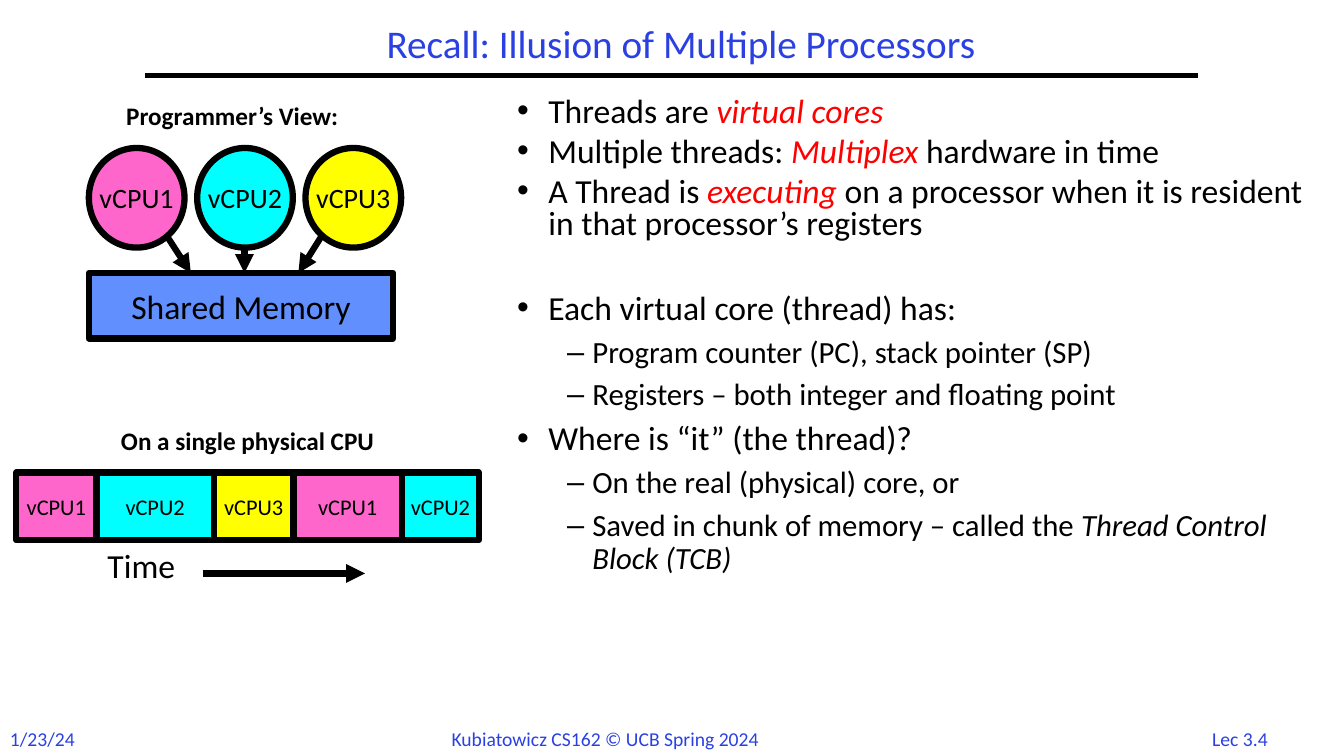
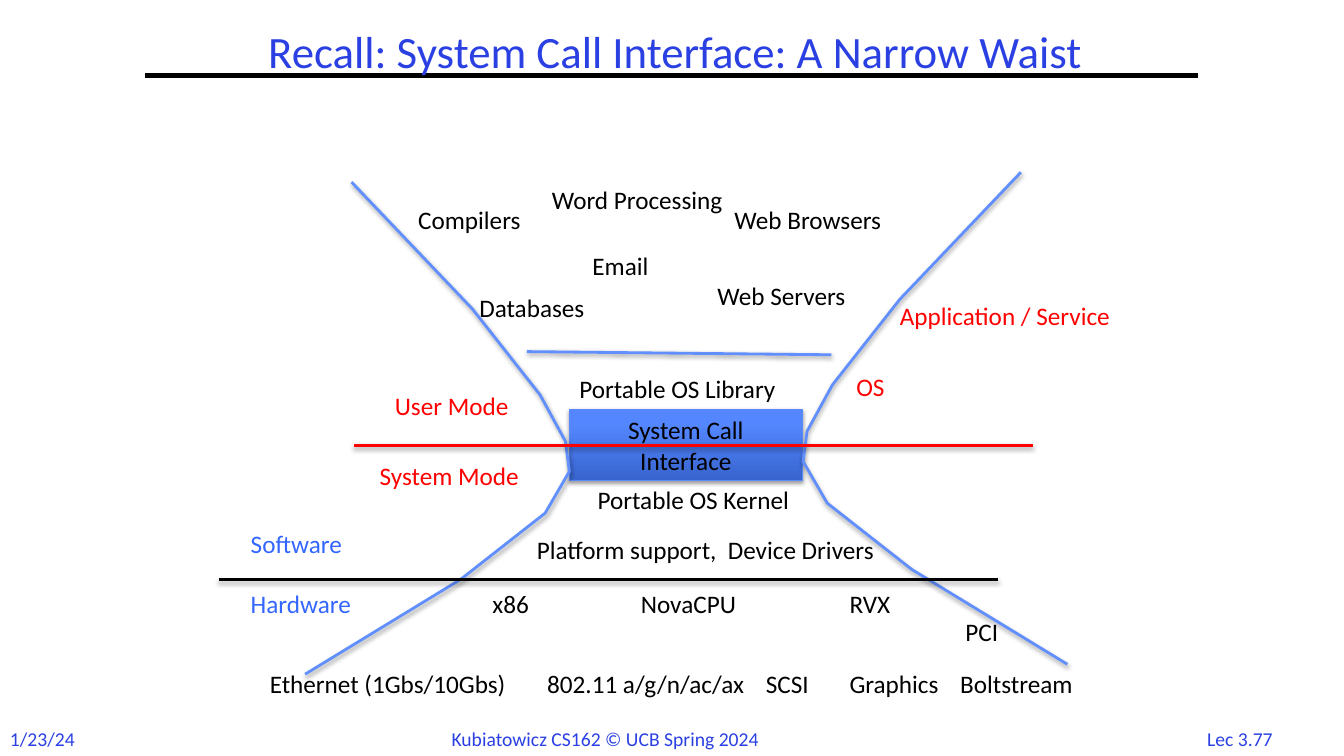
from itertools import accumulate
from pptx import Presentation
from pptx.dml.color import RGBColor
from pptx.enum.shapes import MSO_CONNECTOR, MSO_SHAPE
from pptx.enum.text import MSO_ANCHOR, PP_ALIGN
from pptx.oxml import parse_xml
from pptx.oxml.ns import nsdecls, qn
from pptx.util import Cm, Pt

FONT = "Calibri"
BLACK, RED, BLUE = "000000", "FF0000", "2A40E2"
SKY, LINK = "618FFD", "3366FF"
PINK, CYAN, YELLOW = "FF66CC", "00FFFF", "FFFF00"
HUES = {"vCPU1": PINK, "vCPU2": CYAN, "vCPU3": YELLOW}
LEFT, MID = PP_ALIGN.LEFT, PP_ALIGN.CENTER


def paint(target, tone):
    target.rgb = RGBColor.from_string(tone)


def style(para, size, tone=BLACK, align=LEFT, bold=False):
    para.alignment = align
    font = para.font
    font.name, font.size, font.bold = FONT, Pt(size), bold
    paint(font.color, tone)


def label(slide, text, box, size=18, tone=BLACK, align=LEFT, bold=False):
    frame = slide.shapes.add_textbox(*map(Cm, box)).text_frame
    frame.word_wrap = True
    frame.text = text
    style(frame.paragraphs[0], size, tone, align, bold)
    return frame


def block(slide, kind, text, box, size, tone=None):
    shape = slide.shapes.add_shape(kind, *map(Cm, box))
    shape.shadow.inherit = False
    if tone:
        shape.fill.solid()
        paint(shape.fill.fore_color, tone)
        paint(shape.line.color, BLACK)
        shape.line.width = Pt(4.5)
    frame = shape.text_frame
    frame.margin_left = frame.margin_right = 0
    frame.margin_top = frame.margin_bottom = 0
    frame.vertical_anchor = MSO_ANCHOR.MIDDLE
    frame.word_wrap = False
    frame.text = text
    for para in frame.paragraphs:
        style(para, size, align=MID)
    return shape


def effect(part, soft):
    props = part.element.spPr
    for old in props.findall(qn("a:effectLst")):
        props.remove(old)
    shade = (
        '<a:outerShdw blurRad="40000" dist="20000" dir="5400000" rotWithShape="0">'
        '<a:srgbClr val="000000"><a:alpha val="38000"/></a:srgbClr></a:outerShdw>'
    )
    props.append(parse_xml(
        f'<a:effectLst {nsdecls("a")}>{shade if soft else ""}</a:effectLst>'))


def stroke(slide, ends, tone=BLACK, width=2.0, arrow=False, soft=False):
    line = slide.shapes.add_connector(MSO_CONNECTOR.STRAIGHT, *map(Cm, ends))
    paint(line.line.color, tone)
    line.line.width = Pt(width)
    if arrow:
        line.element.spPr.find(qn("a:ln")).append(
            parse_xml(f'<a:tailEnd {nsdecls("a")} type="triangle"/>'))
    effect(line, soft)


def base(deck, title, box, size, page):
    slide = deck.slides.add_slide(deck.slide_layouts[6])
    stroke(slide, (3.66, 1.9, 30.2, 1.9), width=3)
    for text, left, width, align in (
        ("1/23/24", 0, 2.4, LEFT),
        ("Kubiatowicz CS162 © UCB Spring 2024", 11.13, 9.35, LEFT),
        (page, 30.02, 2.46, MID),
    ):
        label(slide, text, (left, 18.19, width, 0.85), 14, BLUE, align)
    frame = label(slide, title, box, size, BLUE, MID)
    frame.vertical_anchor = MSO_ANCHOR.MIDDLE
    frame.paragraphs[0].line_spacing = 0.9
    return slide


def bullet(para, level):
    props = para._p.get_or_add_pPr()
    left, hang = ((0.79, 0.79), (1.9, 0.64))[level]
    props.set("marL", str(Cm(left)))
    props.set("indent", str(-Cm(hang)))
    mark = parse_xml(f'<a:buChar {nsdecls("a")} char="{"•–"[level]}"/>')
    face = parse_xml(f'<a:buFont {nsdecls("a")} typeface="Arial"/>')
    props.find(qn("a:defRPr")).addprevious(face)
    face.addnext(mark)


def points(slide, box, items):
    frame = slide.shapes.add_textbox(*map(Cm, box)).text_frame
    frame.word_wrap = True
    for count, (level, space, gap, runs) in enumerate(items):
        para = frame.add_paragraph() if count else frame.paragraphs[0]
        para.line_spacing, para.space_before = space, Pt(gap)
        style(para, 22 if level else 24)
        bullet(para, level)
        for text, tone in runs:
            run = para.add_run()
            run.text = text
            if tone:
                run.font.italic = True
                paint(run.font.color, tone)


def viewer(slide, x, y):
    label(slide, "Programmer’s View:", (x + 0.69, y, 6.71, 1.02), bold=True)
    for count, (name, tone) in enumerate(HUES.items()):
        block(slide, MSO_SHAPE.OVAL, name,
              (x + 2.73 * count, y + 1.32, 2.41, 2.51), 20, tone)
    block(slide, MSO_SHAPE.RECTANGLE, "Shared Memory",
          (x, y + 4.47, 7.67, 1.65), 24, SKY)
    for start, top, end in ((1.96, 3.53, 2.57), (3.92, 3.83, 3.92), (5.87, 3.53, 5.28)):
        stroke(slide, (x + start, y + top, x + end, y + 4.47), width=4.5, arrow=True)


def timeline(slide, x, y):
    label(slide, "On a single physical CPU", (x + 1.6, y, 8.46, 1.02),
          align=MID, bold=True)
    names = ("vCPU1", "vCPU2", "vCPU3", "vCPU1", "vCPU2")
    widths = (2.02, 2.96, 2.01, 2.73, 1.94)
    for name, width, edge in zip(names, widths, accumulate(widths)):
        block(slide, MSO_SHAPE.RECTANGLE, name,
              (x + edge - width, y + 1.32, width, 1.7), 16, HUES[name])
    label(slide, "Time", (x + 2.05, y + 3.02, 2.62, 1.3), 24)
    stroke(slide, (x + 4.7, y + 3.86, x + 8.79, y + 3.86), width=4.5, arrow=True)


def curve(slide, spots):
    spots = [(Cm(x), Cm(y)) for x, y in spots]
    path = slide.shapes.build_freeform(*spots[0])
    path.add_line_segments(spots[1:], close=False)
    shape = path.convert_to_shape()
    shape.fill.background()
    paint(shape.line.color, SKY)
    shape.line.width = Pt(2)
    effect(shape, True)


def waist(slide, x, y):
    call = block(slide, MSO_SHAPE.RECTANGLE, "System Call\nInterface",
                 (x + 8.84, y + 5.97, 5.87, 1.8), 18)
    call.fill.gradient()
    call.fill.gradient_angle = 90
    for stop, tone, place in zip(call.fill.gradient_stops, ("3764CE", "5487FF"), (0, 0.8)):
        paint(stop.color, tone)
        stop.position = place
    paint(call.line.color, "5B8AFB")
    call.line.width = Pt(0.75)
    effect(call, True)

    side = ((3.35, 0.25), (6.4, 3.45), (8.1, 5.61), (8.74, 6.78),
            (8.84, 7.54), (8.23, 8.59), (6.1, 10.26), (2.18, 12.65))
    curve(slide, [(x + a, y + b) for a, b in side])
    curve(slide, [(x + 23.57 - a, y + b - 0.25) for a, b in side])

    for a, b, c, d, tone in (
        (7.77, 4.52, 15.44, 4.6, SKY),
        (0, 10.26, 19.63, 10.26, BLACK),
        (3.4, 6.88, 20.52, 6.88, RED),
    ):
        stroke(slide, (x + a, y + b, x + c, y + d), tone, soft=True)

    words = {
        BLACK: (
            ("Compilers", 4.78, 0.69, 3.4),
            ("Word Processing", 8.15, 0.18, 5.38),
            ("Web Browsers", 12.75, 0.69, 4.67),
            ("Email", 9.17, 1.85, 2.11),
            ("Databases", 6.32, 2.9, 3.58),
            ("Web Servers", 12.32, 2.59, 4.22),
            ("Portable OS Library", 8.84, 4.93, 6.15),
            ("Portable OS Kernel", 9.3, 7.75, 6.05),
            ("Platform support,  Device Drivers", 7.77, 8.99, 9.91),
            ("x86", 6.65, 10.36, 1.55),
            ("NovaCPU", 10.39, 10.36, 3.23),
            ("RVX", 15.65, 10.36, 1.93),
            ("PCI", 18.57, 11.07, 1.57),
            ("Ethernet (1Gbs/10Gbs)", 1.04, 12.37, 7.14),
            ("802.11 a/g/n/ac/ax", 8.03, 12.37, 5.74),
            ("SCSI", 13.54, 12.37, 2.01),
            ("Graphics", 15.65, 12.37, 3.07),
            ("Boltstream", 18.44, 12.37, 3.94),
        ),
        LINK: (
            ("Software", 0.56, 8.84, 3.05),
            ("Hardware", 0.56, 10.36, 3.3),
        ),
        RED: (
            ("User Mode", 4.19, 5.38, 3.66),
            ("System Mode", 3.81, 7.14, 4.42),
            ("OS", 15.82, 4.9, 1.45),
            ("Application / Service", 16.92, 3.1, 6.32),
        ),
    }
    for tone, group in words.items():
        for text, left, top, width in group:
            label(slide, text, (x + left, y + top, width, 1.02), tone=tone)


def main():
    deck = Presentation()
    deck.slide_width, deck.slide_height = Cm(33.87), Cm(19.05)

    slide = base(deck, "Recall: Illusion of Multiple Processors",
                 (4.88, 0.43, 24.56, 1.47), 28, "Lec 3.4")
    points(slide, (12.78, 2.34, 20.65, 14.81), (
        (0, 0.8, 5.5, (("Threads are ", None), ("virtual cores", RED))),
        (0, 0.8, 5.5, (("Multiple threads: ", None), ("Multiplex", RED),
                       (" hardware in time", None))),
        (0, 0.8, 5.5, (("A Thread is ", None), ("executing ", RED),
                       ("on a processor when it is resident in that processor’s registers", None))),
        (0, 0.9, 35, (("Each virtual core (thread) has:", None),)),
        (1, 0.9, 6.6, (("Program counter (PC), stack pointer (SP)", None),)),
        (1, 0.9, 6.6, (("Registers – both integer and floating point", None),)),
        (0, 0.9, 6.6, (("Where is “it” (the thread)?", None),)),
        (1, 0.9, 6.6, (("On the real (physical) core, or", None),)),
        (1, 0.9, 6.6, (("Saved in chunk of memory – called the ", None),
                       ("Thread Control Block (TCB)", BLACK))),
    ))
    viewer(slide, 2.24, 2.41)
    timeline(slide, 0.41, 10.59)

    slide = base(deck, "Recall: System Call Interface: A Narrow Waist",
                 (4.83, 0.2, 24.38, 2.34), 32, "Lec 3.77")
    waist(slide, 5.51, 4.34)
    deck.save("out.pptx")


if __name__ == "__main__":
    main()
